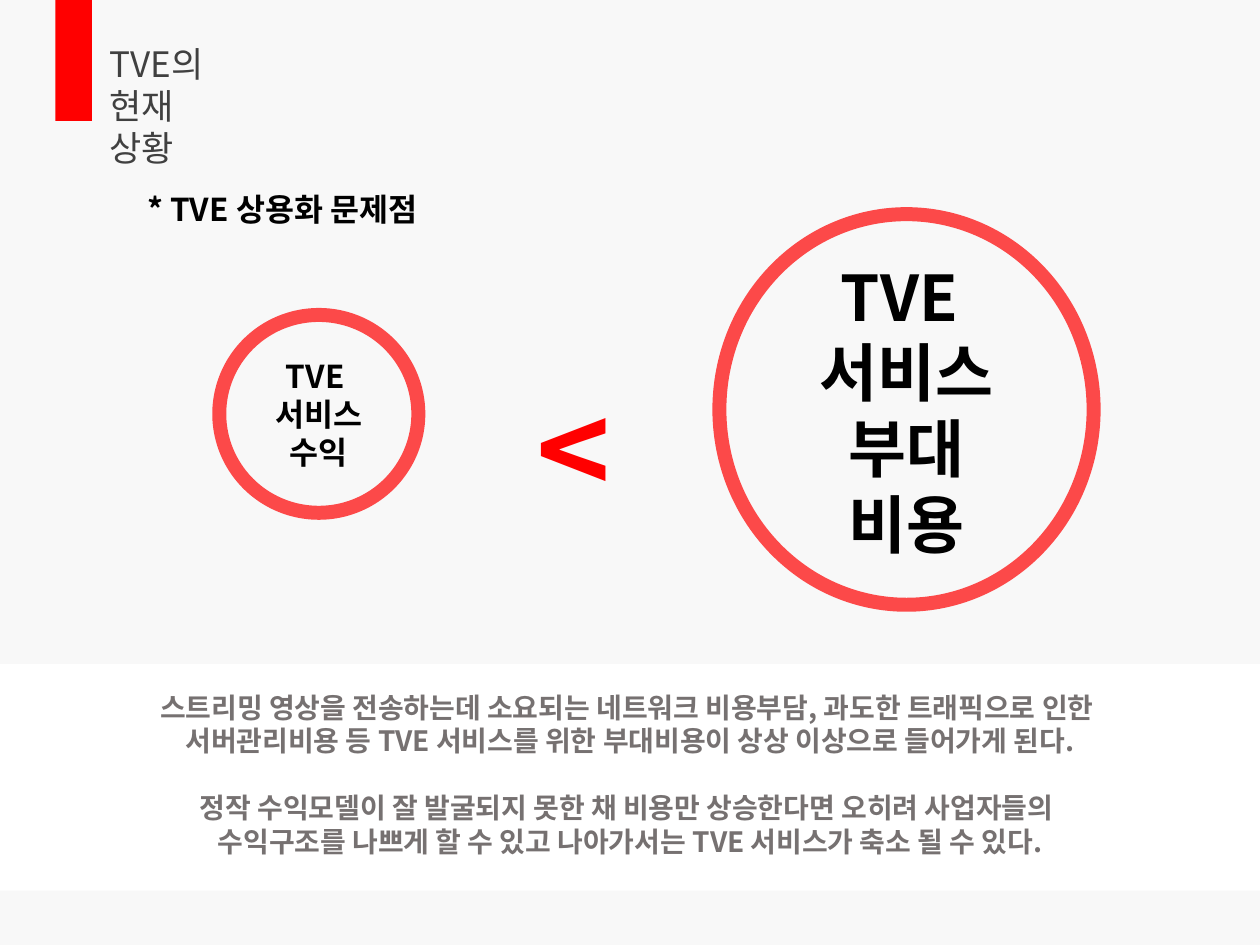
from dataclasses import dataclass

from pptx import Presentation
from pptx.dml.color import RGBColor
from pptx.enum.shapes import MSO_SHAPE as Shape
from pptx.enum.text import MSO_ANCHOR as Anchor, PP_ALIGN as Align
from pptx.oxml.ns import qn
from pptx.slide import Slide
from pptx.text.text import TextFrame
from pptx.util import Inches, Pt
from lxml.etree import SubElement

FONT = "Noto Sans CJK KR"
COLORS = {
    "background": "F8F8F8",
    "band": "FFFFFF",
    "accent": "FF0000",
    "title": "404040",
    "body": "767171",
    "text": "000000",
}


@dataclass(frozen=True)
class Box:
    left: float
    top: float
    width: float
    height: float

    def lengths(self) -> list[Inches]:
        return [Inches(v) for v in (self.left, self.top, self.width, self.height)]


@dataclass(frozen=True)
class Label:
    box: Box
    lines: tuple[str, ...]
    size: int
    color: str = "text"
    bold: bool = True
    align: Align = Align.LEFT
    spacing: float | None = None
    gap_before: int | None = None


@dataclass(frozen=True)
class Bar:
    box: Box
    color: str


BARS = (
    Bar(Box(0, 5.27, 10, 1.8), "band"),
    Bar(Box(0.44, 0, 0.29, 0.96), "accent"),
)
LABELS = (
    Label(
        Box(0, 5.43, 10, 1.45),
        (
            "스트리밍 영상을 전송하는데 소요되는 네트워크 비용부담, 과도한 트래픽으로 인한 ",
            "서버관리비용 등 TVE 서비스를 위한 부대비용이 상상 이상으로 들어가게 된다.",
            "정작 수익모델이 잘 발굴되지 못한 채 비용만 상승한다면 오히려 사업자들의 ",
            "수익구조를 나쁘게 할 수 있고 나아가서는 TVE 서비스가 축소 될 수 있다.",
        ),
        16, "body", align=Align.CENTER, gap_before=2,
    ),
    Label(Box(0.77, 0.29, 1.27, 0.77), ("TVE의", "현재 상황"), 20, "title", bold=False),
    Label(Box(4.16, 2.3, 0.48, 1.77), ("<",), 72, "accent", spacing=1.5),
    Label(Box(1.07, 1.46, 3.58, 0.4), ("* TVE 상용화 문제점",), 18),
)
CIRCLES = (
    Label(Box(1.74, 2.5, 1.58, 1.57), ("TVE ", "서비스", "수익"), 18, align=Align.CENTER),
    Label(Box(5.71, 1.7, 2.97, 3.1), ("TVE ", "서비스", "부대 비용"), 36, align=Align.CENTER),
)


def rgb(name: str) -> RGBColor:
    return RGBColor.from_string(COLORS[name])


def write(tf: TextFrame, label: Label) -> None:
    tf.word_wrap = True
    for i, line in enumerate(label.lines):
        p = tf.paragraphs[0] if i == 0 else tf.add_paragraph()
        p.alignment = label.align
        if label.spacing:
            p.line_spacing = label.spacing
        if i == label.gap_before:
            p.space_before = Pt(19)
        r = p.add_run()
        r.text = line
        r.font.name = FONT
        r.font.size = Pt(label.size)
        r.font.bold = label.bold
        r.font.color.rgb = rgb(label.color)
        SubElement(r.font._element, qn("a:ea"), typeface=FONT)


def add_bar(s: Slide, bar: Bar) -> None:
    sp = s.shapes.add_shape(Shape.RECTANGLE, *bar.box.lengths())
    sp.shadow.inherit = False
    sp.fill.solid()
    sp.fill.fore_color.rgb = rgb(bar.color)
    sp.line.fill.background()


def add_label(s: Slide, label: Label) -> None:
    write(s.shapes.add_textbox(*label.box.lengths()).text_frame, label)


def add_circle(s: Slide, label: Label) -> None:
    sp = s.shapes.add_shape(Shape.OVAL, *label.box.lengths())
    sp.shadow.inherit = False
    sp.fill.background()
    sp.line.width = Pt(8)
    sp.line.color.rgb = rgb("accent")
    color = sp.line._ln.find(f".//{qn('a:srgbClr')}")
    SubElement(color, qn("a:alpha"), val="70000")
    sp.text_frame.vertical_anchor = Anchor.MIDDLE
    write(sp.text_frame, label)


def main() -> None:
    """Build the slide comparing TVE service revenue with its side costs."""
    prs = Presentation()
    prs.slide_width, prs.slide_height = Inches(10), Inches(7.5)
    s = prs.slides.add_slide(prs.slide_layouts[6])
    s.background.fill.solid()
    s.background.fill.fore_color.rgb = rgb("background")
    for bar in BARS:
        add_bar(s, bar)
    for label in LABELS:
        add_label(s, label)
    for circle in CIRCLES:
        add_circle(s, circle)
    prs.save("out.pptx")


if __name__ == "__main__":
    main()
